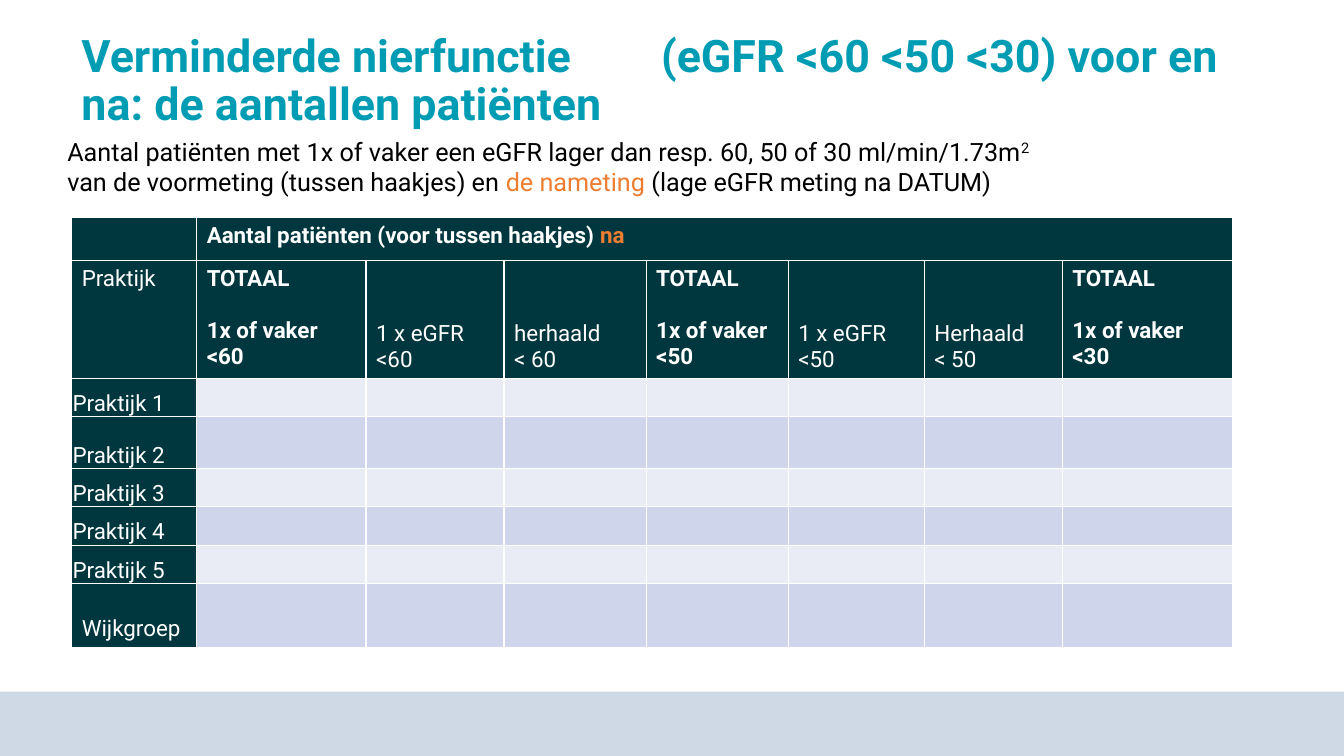
from lxml import etree
from pptx import Presentation
from pptx.dml.color import RGBColor
from pptx.enum.shapes import MSO_SHAPE
from pptx.enum.text import MSO_ANCHOR, MSO_AUTO_SIZE, PP_ALIGN
from pptx.oxml.ns import qn
from pptx.util import Pt

RECT = MSO_SHAPE.RECTANGLE
TOP, MIDDLE, BOTTOM = MSO_ANCHOR.TOP, MSO_ANCHOR.MIDDLE, MSO_ANCHOR.BOTTOM
LEFT = PP_ALIGN.LEFT
NO_FIT = MSO_AUTO_SIZE.NONE
TEAL, DARK, ORANGE = "009CB4", "00373E", "ED7D31"
WHITE, BLACK, FOOTER = "FFFFFF", "000000", "CED9E5"
BANDS = ["E9EBF5", "CFD5EA"]


def rgb(value):
    return RGBColor.from_string(value)


def add_run(p, text, size, color, bold=False):
    r = p.add_run()
    r.text = text
    for name, value in {"name": "Roboto", "size": Pt(size), "bold": bold}.items():
        setattr(r.font, name, value)
    r.font.color.rgb = rgb(color)
    return r


prs = Presentation()
prs.slide_width, prs.slide_height = Pt(960), Pt(540)
s = prs.slides.add_slide(prs.slide_layouts[5])

# Footer band
band = s.shapes.add_shape(RECT, Pt(0), Pt(494), Pt(960), Pt(46))
band.shadow.inherit = False
band.fill.solid()
band.fill.fore_color.rgb = rgb(FOOTER)
band.line.fill.background()

# Title, with a tab stop for the gap
title = s.shapes.title
title.left, title.top, title.width, title.height = Pt(51), Pt(20), Pt(831), Pt(77)
tf = title.text_frame
for name, value in {"word_wrap": True, "auto_size": NO_FIT,
                    "vertical_anchor": MIDDLE}.items():
    setattr(tf, name, value)
p = tf.paragraphs[0]
tabs = etree.SubElement(p._p.get_or_add_pPr(), qn("a:tabLst"))
etree.SubElement(tabs, qn("a:tab"), pos=str(Pt(414)), algn="l")
p.alignment, p.line_spacing = LEFT, 0.9
add_run(p, "Verminderde nierfunctie\t(eGFR <60 <50 <30) voor en na: de aantallen patiënten",
        32, TEAL, True)

# Explanation
sp = s.shapes.add_textbox(Pt(41), Pt(93.6), Pt(892), Pt(51))
tf = sp.text_frame
tf.word_wrap = True
p = tf.paragraphs[0]
add_run(p, "Aantal patiënten met 1x of vaker een eGFR lager dan resp. 60, 50 of 30 ml/min/1.73m",
        18, BLACK)
r = add_run(p, "2", 18, BLACK)
r._r.get_or_add_rPr().set("baseline", "30000")
p = tf.add_paragraph()
for text, color in [("van de voormeting (tussen haakjes) en ", BLACK),
                    ("de nameting ", ORANGE),
                    ("(lage eGFR meting na DATUM)", BLACK)]:
    add_run(p, text, 18, color)

# Table grid
widths = [89.3, 121, 98.6, 101.5, 101.5, 97.2, 98.6, 121.7]
heights = [30.4, 84.2, 27.4, 37.1, 27.4, 27.4, 27.4, 45.6]
table = s.shapes.add_table(len(heights), len(widths), Pt(51.2), Pt(155.6),
                           Pt(sum(widths)), Pt(sum(heights))).table
for column, width in zip(table.columns, widths):
    column.width = Pt(width)
for row, height in zip(table.rows, heights):
    row.height = Pt(height)

# Cell fills; empty cells must not stretch their rows
for i, row in enumerate(table.rows):
    for j, cell in enumerate(row.cells):
        cell.fill.solid()
        cell.fill.fore_color.rgb = rgb(DARK if i < 2 or j == 0 else BANDS[i % 2])
        cell.margin_top = cell.margin_bottom = Pt(0)

# Heading across the counts
table.cell(0, 1).merge(table.cell(0, 7))
heading = table.cell(0, 1)
heading.margin_top = Pt(3.6)
p = heading.text_frame.paragraphs[0]
add_run(p, "Aantal patiënten (voor tussen haakjes) ", 16, WHITE, True)
add_run(p, "na", 16, ORANGE, True)

# Column heads and practice names: row, column, lines, anchor
labels = [(1, 0, ["Praktijk"], TOP)]
for j, limit in [(1, "<60"), (4, "<50"), (7, "<30")]:
    labels.append((1, j, ["TOTAAL", "1x of vaker", limit], TOP))
for j, lines in [(2, ["1 x eGFR", "<60"]), (3, ["herhaald", "< 60"]),
                 (5, ["1 x eGFR", "<50"]), (6, ["Herhaald", "< 50"])]:
    labels.append((1, j, lines, BOTTOM))
for n in range(1, 6):
    labels.append((n + 1, 0, [f"Praktijk {n}"], BOTTOM))
labels.append((7, 0, ["Wijkgroep"], BOTTOM))

for i, j, lines, anchor in labels:
    cell = table.cell(i, j)
    cell.vertical_anchor = anchor
    if 2 <= i <= 6:
        cell.margin_left = cell.margin_right = cell.margin_top = Pt(0.7)
    else:
        cell.margin_top = cell.margin_bottom = Pt(3.6)
    total = lines[0] == "TOTAAL"
    tf = cell.text_frame
    for k, line in enumerate(lines):
        p = tf.add_paragraph() if k else tf.paragraphs[0]
        if total and k == 1:
            p.space_before = Pt(18.75)
        add_run(p, line, 16, WHITE, total)

prs.save("out.pptx")
